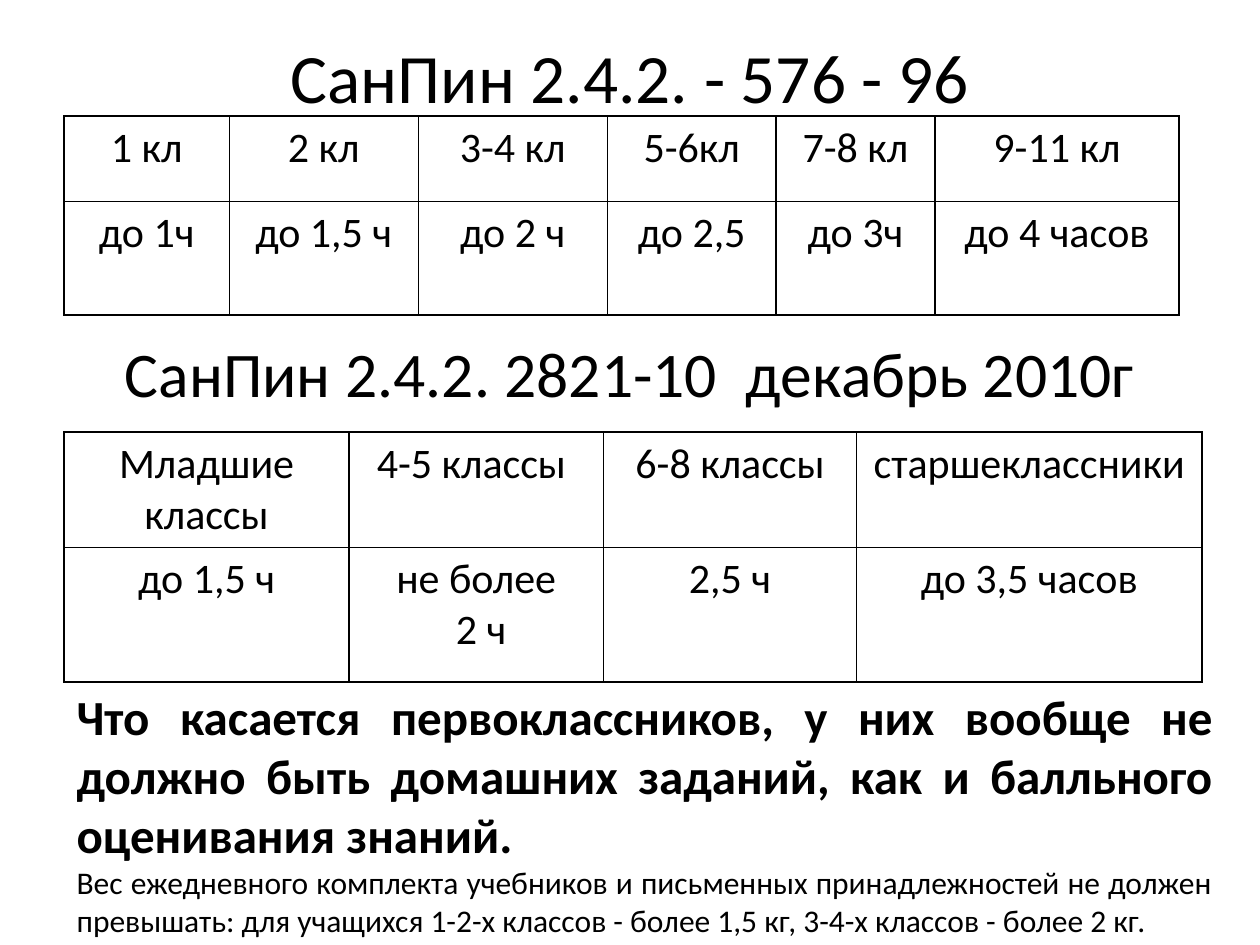
import dataclasses

import lxml.etree
import pptx
import pptx.dml.color
import pptx.enum.text
import pptx.oxml.ns
import pptx.util

Inches = pptx.util.Inches
Pt = pptx.util.Pt
Align = pptx.enum.text.PP_ALIGN
Anchor = pptx.enum.text.MSO_ANCHOR
AutoSize = pptx.enum.text.MSO_AUTO_SIZE


@dataclasses.dataclass(frozen=True)
class Theme:
    font: str = "Calibri"
    ink: str = "000000"
    title_size: float = 39.6
    subtitle_size: float = 36.3
    cell_size: float = 24
    lead_size: float = 28
    note_size: float = 18
    border_width: float = 1


class SlideBuilder:
    """Holds the theme and the current slide, and adds elements to it."""

    def __init__(self, presentation, theme):
        self.theme = theme
        self.slide = presentation.slides.add_slide(presentation.slide_layouts[5])

    def add_text(self, paragraph, text, size, alignment, bold=False):
        paragraph.alignment = alignment
        run = paragraph.add_run()
        run.text = text
        run.font.name = self.theme.font
        run.font.size = Pt(size)
        run.font.bold = bold
        run.font.color.rgb = pptx.dml.color.RGBColor.from_string(self.theme.ink)

    def heading(self, shape, text, size):
        frame = shape.text_frame
        frame.word_wrap = True
        frame.auto_size = AutoSize.NONE
        frame.vertical_anchor = Anchor.MIDDLE
        self.add_text(frame.paragraphs[0], text, size, Align.CENTER)

    def title(self, text, left, top, width, height):
        shape = self.slide.shapes.title
        shape.left, shape.top = Inches(left), Inches(top)
        shape.width, shape.height = Inches(width), Inches(height)
        self.heading(shape, text, self.theme.title_size)

    def text_box(self, left, top, width, height):
        return self.slide.shapes.add_textbox(
            Inches(left), Inches(top), Inches(width), Inches(height))

    def subtitle(self, text, left, top, width, height):
        shape = self.text_box(left, top, width, height)
        self.heading(shape, text, self.theme.subtitle_size)

    def body(self, items, left, top, width, height):
        frame = self.text_box(left, top, width, height).text_frame
        frame.word_wrap = True
        frame.auto_size = AutoSize.SHAPE_TO_FIT_TEXT
        for index, (text, size, bold) in enumerate(items):
            paragraph = frame.add_paragraph() if index else frame.paragraphs[0]
            self.add_text(paragraph, text, size, Align.JUSTIFY, bold)

    def border(self, cell):
        properties = cell._tc.get_or_add_tcPr()
        qn = pptx.oxml.ns.qn
        for position, side in enumerate(("a:lnL", "a:lnR", "a:lnT", "a:lnB")):
            line = lxml.etree.Element(qn(side), w=str(Pt(self.theme.border_width)))
            fill = lxml.etree.SubElement(line, qn("a:solidFill"))
            lxml.etree.SubElement(fill, qn("a:srgbClr"), val=self.theme.ink)
            properties.insert(position, line)

    def table(self, rows, left, top, column_widths, row_heights):
        table = self.slide.shapes.add_table(
            len(rows), len(column_widths), Inches(left), Inches(top),
            Inches(sum(column_widths)), Inches(sum(row_heights))).table
        table.first_row = table.horz_banding = False
        for column, width in zip(table.columns, column_widths):
            column.width = Inches(width)
        for row, height, texts in zip(table.rows, row_heights, rows):
            row.height = Inches(height)
            for cell, text in zip(row.cells, texts):
                cell.fill.background()
                self.border(cell)
                frame = cell.text_frame
                for index, line in enumerate(text.split("\n")):
                    paragraph = frame.add_paragraph() if index else frame.paragraphs[0]
                    self.add_text(paragraph, line, self.theme.cell_size, Align.CENTER)


def main():
    presentation = pptx.Presentation()
    presentation.slide_width, presentation.slide_height = Inches(10), Inches(7.5)
    theme = Theme()
    builder = SlideBuilder(presentation, theme)

    # Earlier standard
    builder.title("СанПин 2.4.2. - 576 - 96", 0.5, 0.3, 9, 0.61)

    # Newer standard: homework time by school stage
    builder.table(
        [["Младшие классы", "4-5 классы ", "6-8 классы", "старшеклассники "],
         ["до 1,5 ч", "не более\n 2 ч", "2,5 ч", "до 3,5 часов"]],
        0.51, 3.43, [2.26, 2.02, 2.01, 2.74], [0.91, 1.07])

    # Closing remarks
    builder.body(
        [("Что касается первоклассников, у них вообще не должно быть домашних "
          "заданий, как и балльного оценивания знаний.", theme.lead_size, True),
         ("Вес ежедневного комплекта учебников и письменных принадлежностей не "
          "должен превышать: для учащихся 1-2-х классов - более 1,5 кг, "
          "3-4-х классов - более 2 кг.", theme.note_size, False)],
        0.51, 5.4, 9.21, 2.59)

    # Earlier standard: homework time by grade
    builder.table(
        [["1 кл", "2 кл", "3-4 кл", "5-6кл", "7-8 кл", "9-11 кл"],
         ["до 1ч", "до 1,5 ч", "до 2 ч", "до 2,5", "до 3ч", "до 4 часов"]],
        0.51, 0.92, [1.31, 1.5, 1.5, 1.34, 1.26, 1.94], [0.68, 0.9])

    # Newer standard heading
    builder.subtitle("СанПин 2.4.2. 2821-10  декабрь 2010г", 0.5, 2.65, 9, 0.61)

    presentation.save("out.pptx")


if __name__ == "__main__":
    main()
